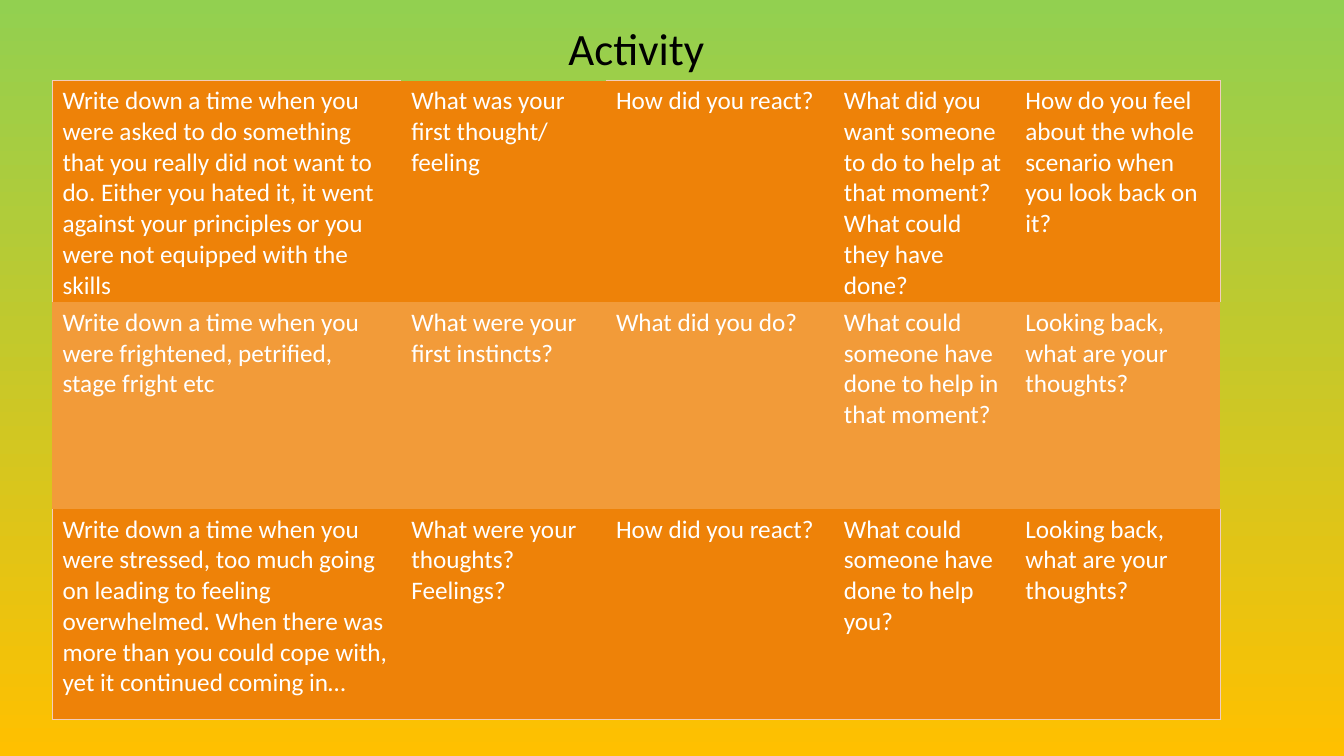
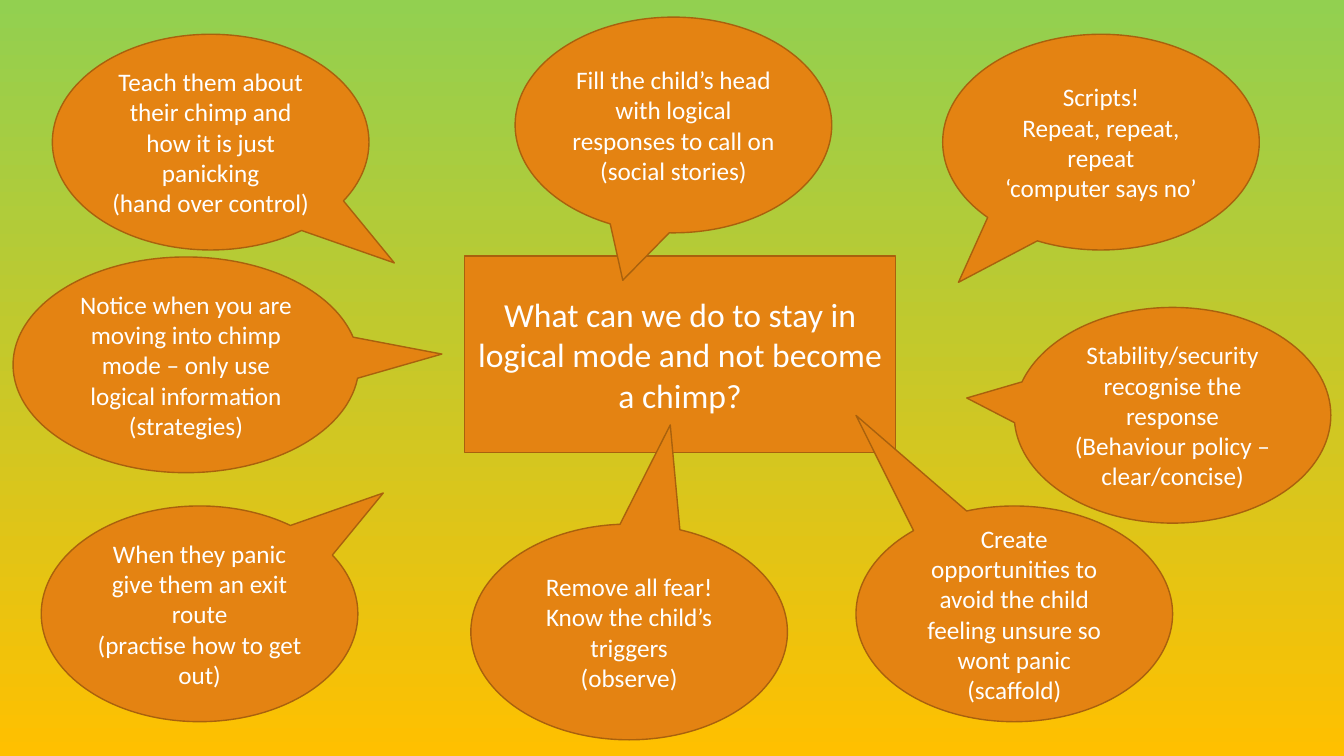
from typing import NamedTuple

import pptx
import pptx.dml.color
import pptx.enum.shapes
import pptx.enum.text
import pptx.oxml
import pptx.oxml.ns
import pptx.util
from pptx.util import Inches

RGBColor = pptx.dml.color.RGBColor
Shape = pptx.enum.shapes.MSO_SHAPE
Align = pptx.enum.text.PP_ALIGN

FONT = "Calibri"
WHITE = RGBColor(0xFF, 0xFF, 0xFF)
BLACK = RGBColor(0x00, 0x00, 0x00)
GREEN = RGBColor(0x92, 0xD0, 0x50)
GOLD = RGBColor(0xFF, 0xC0, 0x00)
ORANGE = RGBColor(0xE4, 0x83, 0x12)
BROWN = RGBColor(0xA9, 0x61, 0x0D)
ROW_DARK = RGBColor(0xEE, 0x82, 0x08)
ROW_LIGHT = RGBColor(0xF2, 0x9B, 0x39)
TABLE_EDGE = RGBColor(0xF2, 0xCD, 0xBD)
PLAIN_TABLE_STYLE = "{2D5ABB26-0587-4C30-8999-92F81FD0307C}"

COLUMN_WIDTHS = [3.46, 2.03, 2.26, 1.8, 2.03]
ROW_HEIGHTS = [2.2, 2.05, 2.09]
QUESTIONS = [
    [
        "Write down a time when you were asked to do something that you really did not "
        "want to do. Either you hated it, it went against your principles or you were "
        "not equipped with the skills",
        "What was your first thought/ feeling",
        "How did you react?",
        "What did you want someone to do to help at that moment? What could they have done?",
        "How do you feel about the whole scenario when you look back on it?",
    ],
    [
        "Write down a time when you were frightened, petrified, stage fright etc",
        "What were your first instincts?",
        "What did you do?",
        "What could someone have done to help in that moment?",
        "Looking back, what are your thoughts?",
    ],
    [
        "Write down a time when you were stressed, too much going on leading to feeling "
        "overwhelmed. When there was more than you could cope with, yet it continued "
        "coming in…",
        "What were your thoughts?\nFeelings?",
        "How did you react?",
        "What could someone have done to help you?",
        "Looking back, what are your thoughts?",
    ],
]


class Callout(NamedTuple):
    left: float
    top: float
    tip_x: float
    tip_y: float
    text: str
    width: float = 3.14
    height: float = 2.14


CALLOUTS = [
    Callout(0.52, 0.34, 0.58, 0.56,
            "Teach them about their chimp and how it is just panicking\n(hand over control)"),
    Callout(0.41, 5.02, 0.58, -0.56,
            "When they panic give them an exit route\n(practise how to get out)"),
    Callout(4.67, 5.2, 0.13, -0.96,
            "Remove all fear!\nKnow the child’s triggers\n(observe)"),
    Callout(10.06, 3.05, -0.65, -0.08,
            "Stability/security recognise the response\n(Behaviour policy – clear/concise)"),
    Callout(5.11, 0.17, -0.16, 0.72,
            "Fill the child’s head with logical responses to call on\n(social stories)"),
    Callout(9.35, 0.34, -0.45, 0.65,
            "Scripts!\nRepeat, repeat, repeat\n‘computer says no’"),
    Callout(8.49, 5.02, -0.5, -0.92,
            "Create opportunities to avoid the child feeling unsure so wont panic\n(scaffold)"),
    Callout(0.13, 2.55, 0.74, -0.05,
            "Notice when you are moving into chimp mode – only use logical information\n"
            "(strategies)", width=3.43),
]


def write(frame, text: str, size: float, color=WHITE, align=Align.LEFT) -> None:
    frame.text = text
    for paragraph in frame.paragraphs:
        paragraph.alignment = align
        paragraph.font.name = FONT
        paragraph.font.size = pptx.util.Pt(size)
        paragraph.font.color.rgb = color


def set_background(master) -> None:
    fill = master.background.fill
    fill.gradient()
    fill.gradient_angle = 270
    for stop, color in zip(fill.gradient_stops, (GREEN, GOLD)):
        stop.color.rgb = color


def set_borders(cell, sides: str) -> None:
    """Draw the thin table edge on the given sides, named by L, R, T and B."""
    properties = cell._tc.get_or_add_tcPr()
    for position, side in enumerate(sides):
        border = pptx.oxml.parse_xml(
            f'<a:ln{side} {pptx.oxml.ns.nsdecls("a")} w="6350"><a:solidFill>'
            f'<a:srgbClr val="{TABLE_EDGE}"/></a:solidFill></a:ln{side}>'
        )
        properties.insert(position, border)


def outer_sides(row: int, column: int) -> str:
    edges = {
        "L": column == 0 and row != 1,
        "R": column == len(COLUMN_WIDTHS) - 1 and row != 1,
        "T": row == 0 and column != 1,
        "B": row == len(ROW_HEIGHTS) - 1,
    }
    return "".join(side for side, drawn in edges.items() if drawn)


def add_question_table(slide) -> None:
    table = slide.shapes.add_table(
        len(ROW_HEIGHTS), len(COLUMN_WIDTHS), Inches(0.52), Inches(0.8),
        Inches(sum(COLUMN_WIDTHS)), Inches(sum(ROW_HEIGHTS)),
    ).table
    table.first_row = table.horz_banding = False
    table._tbl.tblPr.find(pptx.oxml.ns.qn("a:tableStyleId")).text = PLAIN_TABLE_STYLE
    for column, width in zip(table.columns, COLUMN_WIDTHS):
        column.width = Inches(width)
    for r, (height, questions) in enumerate(zip(ROW_HEIGHTS, QUESTIONS)):
        table.rows[r].height = Inches(height)
        for c, question in enumerate(questions):
            cell = table.cell(r, c)
            cell.margin_bottom = Inches(0)
            write(cell.text_frame, question, 18)
            cell.fill.solid()
            cell.fill.fore_color.rgb = ROW_LIGHT if r % 2 else ROW_DARK
            set_borders(cell, outer_sides(r, c))


def add_bubble(slide, preset, left: float, top: float, width: float, height: float,
               text: str, size: float):
    bubble = slide.shapes.add_shape(
        preset, Inches(left), Inches(top), Inches(width), Inches(height))
    bubble.shadow.inherit = False
    bubble.fill.solid()
    bubble.fill.fore_color.rgb = ORANGE
    bubble.line.color.rgb = BROWN
    bubble.line.width = pptx.util.Pt(1)
    bubble.text_frame.word_wrap = True
    bubble.text_frame.vertical_anchor = pptx.enum.text.MSO_ANCHOR.MIDDLE
    write(bubble.text_frame, text, size, align=Align.CENTER)
    return bubble


def build_activity(slide) -> None:
    add_question_table(slide)
    title = slide.shapes.add_textbox(Inches(5.54), Inches(0.16), Inches(1.57), Inches(0.64))
    write(title.text_frame, "Activity", 32, BLACK)


def build_strategies(slide) -> None:
    add_bubble(slide, Shape.RECTANGLE, 4.61, 2.54, 4.27, 1.95,
               "What can we do to stay in logical mode and not become a chimp?", 24)
    for callout in CALLOUTS:
        bubble = add_bubble(slide, Shape.OVAL_CALLOUT, callout.left, callout.top,
                            callout.width, callout.height, callout.text, 18)
        bubble.adjustments[0] = callout.tip_x
        bubble.adjustments[1] = callout.tip_y


def main() -> None:
    deck = pptx.Presentation()
    deck.slide_width, deck.slide_height = Inches(13.33), Inches(7.5)
    set_background(deck.slide_master)
    for build in (build_activity, build_strategies):
        build(deck.slides.add_slide(deck.slide_layouts[6]))
    deck.save("out.pptx")


if __name__ == "__main__":
    main()
